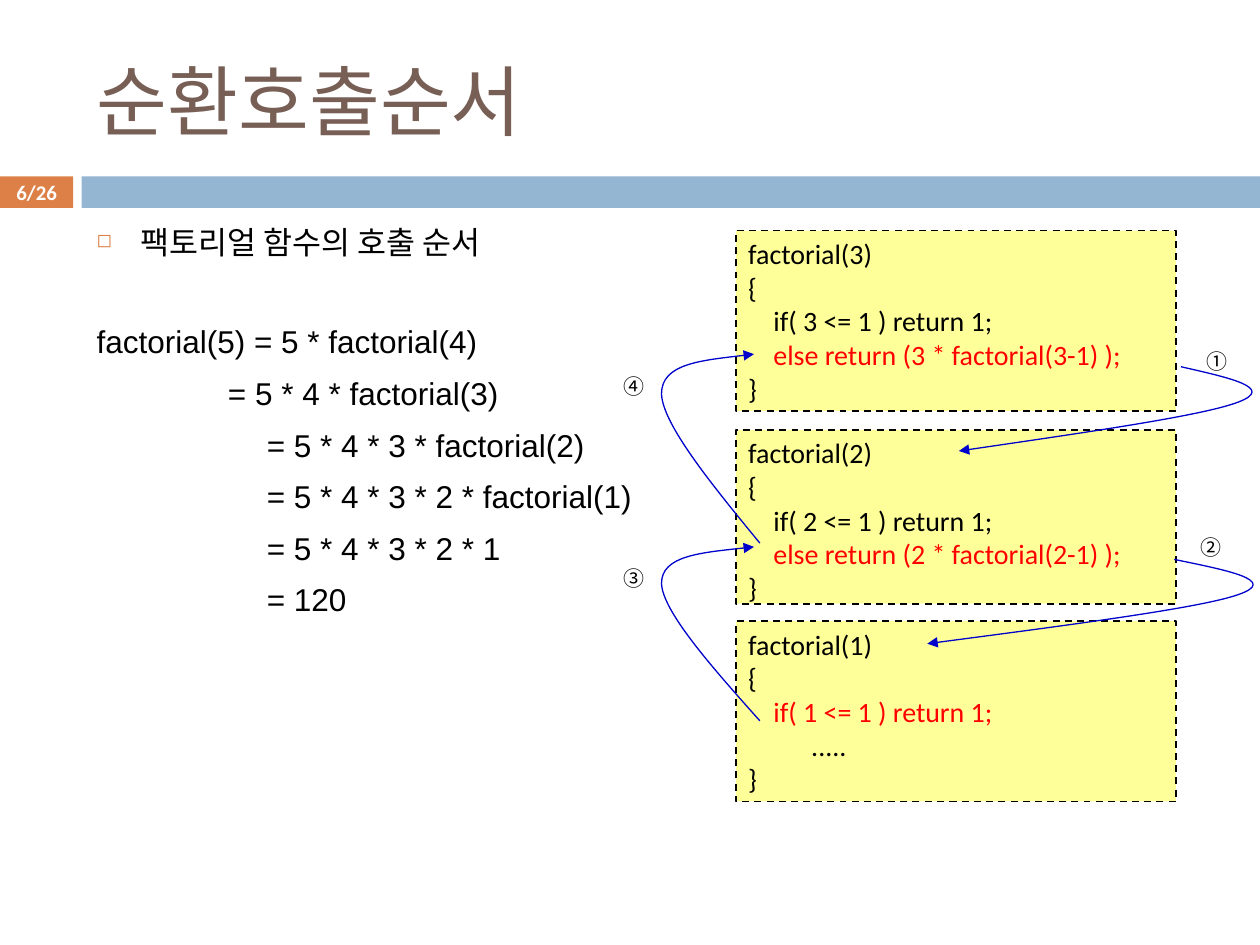
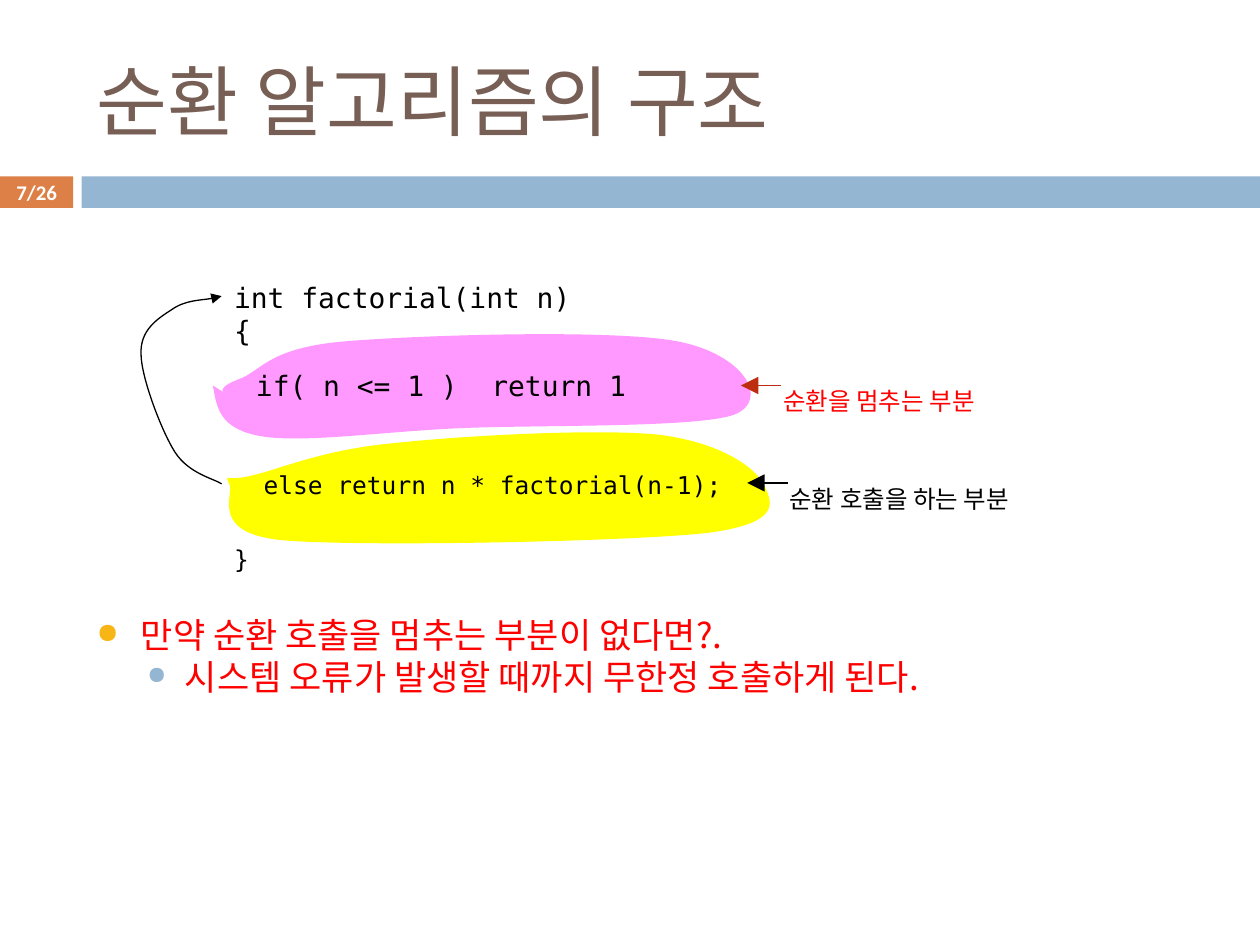
from lxml import etree
from pptx import Presentation
from pptx.dml.color import RGBColor
from pptx.enum.dml import MSO_LINE
from pptx.enum.shapes import MSO_CONNECTOR, MSO_SHAPE
from pptx.enum.text import MSO_ANCHOR, PP_ALIGN
from pptx.oxml.ns import qn
from pptx.util import Pt

BLACK = RGBColor(0x00, 0x00, 0x00)
WHITE = RGBColor(0xFF, 0xFF, 0xFF)
RED = RGBColor(0xFF, 0x00, 0x00)
BRICK = RGBColor(0xBD, 0x2E, 0x11)
BROWN = RGBColor(0x77, 0x5F, 0x55)
ORANGE = RGBColor(0xDD, 0x80, 0x47)
GOLD = RGBColor(0xF7, 0xB6, 0x15)
SKY = RGBColor(0x94, 0xB6, 0xD2)
NAVY = RGBColor(0x00, 0x00, 0xCC)
CREAM = RGBColor(0xFF, 0xFF, 0x99)
YELLOW = RGBColor(0xFF, 0xFF, 0x00)
PINK = RGBColor(0xFF, 0x99, 0xFF)

RECT = MSO_SHAPE.RECTANGLE
STRAIGHT = MSO_CONNECTOR.STRAIGHT
DASH = MSO_LINE.DASH
TOP, MIDDLE = MSO_ANCHOR.TOP, MSO_ANCHOR.MIDDLE
LEFT, CENTER = PP_ALIGN.LEFT, PP_ALIGN.CENTER

SANS, ARIAL, MONO, KOREAN = "Calibri", "Arial", "DejaVu Sans Mono", "Noto Sans CJK KR"
PAGES = 26

CALL_LOOP = [(0.7, 0), (0.85, 0.13), (1, 0.25), (0.88, 0.42), (0.77, 0.58), (0.38, 0.79), (0, 1)]
RETURN_LOOP = [(1, 1), (0.51, 0.69), (0.01, 0.37), (0, 0.21), (0, 0.05), (0.46, 0.03), (0.94, 0)]
YELLOW_BLOB = [
    (51, 126.5), (48.2, 120), (49.6, 125.8), (65.4, 121.4), (80.6, 117.8), (105, 107),
    (143.9, 103.4), (182.1, 99.1), (260.6, 94.8), (295.8, 98.4), (331.8, 102.7),
    (351.3, 117.1), (356.3, 126.5), (360.6, 135.8), (369.3, 148.8), (323.9, 154.6),
    (278.6, 159.6), (128.8, 162.5), (83.4, 158.9), (38.1, 155.3), (54.6, 132.2), (51, 126.5)]
PINK_BLOB = [
    (47.4, 73.9), (46.7, 72.5), (46.7, 70.3), (58.2, 66), (69.8, 61), (74.8, 48.7),
    (116.6, 45.1), (158.3, 41.5), (270.6, 37.9), (307.4, 45.1), (344.8, 52.3),
    (360.6, 78.2), (339.8, 86.9), (318.2, 94.8), (225.3, 92.6), (179.9, 94.8),
    (135.3, 97), (91.4, 103.4), (68.3, 99.1), (45.3, 94.8), (43.8, 82.6), (41.7, 70.3)]
RECURSION_LOOP = [
    (46.7, 126.5), (42.4, 123.6), (28, 120.7), (20.1, 108.5), (12.2, 96.2), (0.6, 65.3),
    (0.6, 52.3), (0, 38.6), (10, 32.2), (17.9, 27.1), (25.8, 21.4), (41, 21.4), (46.7, 19.2)]


def write(sp, lines, font, size, color=BLACK, anchor=TOP, align=LEFT, wrap=True, bold=False):
    tf = sp.text_frame
    tf.word_wrap = wrap
    tf.vertical_anchor = anchor
    for i, line in enumerate(lines):
        p = tf.paragraphs[0] if i == 0 else tf.add_paragraph()
        p.alignment = align
        for text, run_color in [(line, color)] if isinstance(line, str) else line:
            r = p.add_run()
            r.text = text
            r.font.name, r.font.size, r.font.bold = font, Pt(size), bold
            r.font.color.rgb = run_color
            ea = etree.SubElement(r.font._element, qn("a:ea"))
            ea.set("typeface", KOREAN)
    return tf


def add_text(slide, box, lines, font, size, **style):
    return write(slide.shapes.add_textbox(*map(Pt, box)), lines, font, size, **style)


def add_rect(slide, box, fill):
    sp = slide.shapes.add_shape(RECT, *map(Pt, box))
    sp.shadow.inherit = False
    sp.fill.solid()
    sp.fill.fore_color.rgb = fill
    sp.line.fill.background()
    return sp


def add_arrowhead(sp, color, size="med"):
    sp.line.color.rgb = color
    sp.line.width = Pt(0.75)
    ln = sp._element.spPr.find(qn("a:ln"))
    tail = etree.SubElement(ln, qn("a:tailEnd"))
    for key, value in (("type", "triangle"), ("w", size), ("len", size)):
        tail.set(key, value)


def add_curve(slide, box, points, fill=None, arrow=None):
    x, y, w, h = box
    start, *rest = [(Pt(x + w * u), Pt(y + h * v)) for u, v in points]
    builder = slide.shapes.build_freeform(*start)
    builder.add_line_segments(rest, close=fill is not None)
    sp = builder.convert_to_shape()
    sp.shadow.inherit = False
    path = sp._element.spPr.find(".//" + qn("a:path"))
    segments = path.findall(qn("a:lnTo"))
    for i in range(0, len(segments), 3):
        bezier = etree.Element(qn("a:cubicBezTo"))
        segments[i].addprevious(bezier)
        for segment in segments[i:i + 3]:
            bezier.append(segment[0])
            path.remove(segment)
    if fill is None:
        sp.fill.background()
        add_arrowhead(sp, arrow)
    else:
        sp.fill.solid()
        sp.fill.fore_color.rgb = fill
        sp.line.fill.background()


def add_pointer(slide, x, y, color):
    line = slide.shapes.add_connector(STRAIGHT, Pt(x + 23), Pt(y), Pt(x), Pt(y))
    add_arrowhead(line, color, "lg")
    etree.SubElement(line._element.spPr, qn("a:effectLst"))


def set_indent(p, left, hanging=0):
    pPr = p._p.get_or_add_pPr()
    pPr.set("marL", str(Pt(left)))
    pPr.set("indent", str(-Pt(hanging)))
    return pPr


def set_bullet(p, left, hanging, char, color, percent):
    pPr = set_indent(p, left, hanging)
    clr = etree.SubElement(pPr, qn("a:buClr"))
    etree.SubElement(clr, qn("a:srgbClr")).set("val", str(color))
    etree.SubElement(pPr, qn("a:buSzPct")).set("val", str(percent * 1000))
    etree.SubElement(pPr, qn("a:buChar")).set("char", char)


def add_frame(prs, title, page):
    slide = prs.slides.add_slide(prs.slide_layouts[6])
    number = add_rect(slide, (0, 100.8, 41.9, 18), ORANGE)
    tf = write(number, [f"{page}/{PAGES}"], SANS, 11.9, WHITE, MIDDLE, CENTER, bold=True)
    tf.margin_left = tf.margin_right = 0
    add_rect(slide, (46.6, 100.8, 673.4, 18), SKY)
    add_text(slide, (48.2, 18, 642.2, 77.8), [title], SANS, 44, color=BROWN, anchor=MIDDLE)
    return slide


def add_expansion(slide, box):
    steps = [
        ("팩토리얼 함수의 호출 순서", 0, 0),
        ("factorial(5) = 5 * factorial(4)", 0, 35),
        ("= 5 * 4 * factorial(3)", 75, 7.9),
        ("= 5 * 4 * 3 * factorial(2)", 97.2, 7.9),
        ("= 5 * 4 * 3 * 2 * factorial(1)", 97.2, 7.9),
        ("= 5 * 4 * 3 * 2 * 1", 97.2, 7.9),
        ("= 120", 97.2, 7.9)]
    tf = add_text(slide, box, [text for text, _, _ in steps], ARIAL, 18)
    for p, (_, left, before) in zip(tf.paragraphs, steps):
        set_indent(p, left)
        p.space_before = Pt(before)
    set_bullet(tf.paragraphs[0], 25.2, 25.2, "◻", ORANGE, 60)


def add_call_box(slide, box, n):
    if n > 1:
        body = [f"    if( {n} <= 1 ) return 1;",
                [("    ", BLACK), (f"else return ({n} * factorial({n}-1) );", RED)]]
    else:
        body = [[("    ", BLACK), ("if( 1 <= 1 ) return 1;", RED)], "\t....."]
    sp = add_rect(slide, box, CREAM)
    sp.line.color.rgb = BLACK
    sp.line.width = Pt(1)
    sp.line.dash_style = DASH
    write(sp, [f"factorial({n})", "{", *body, "}"], SANS, 16)


def add_call_stack(slide, x, y):
    for n, top, height in ((3, 0, 103), (2, 113.8, 99.4), (1, 223.2, 103)):
        add_call_box(slide, (x, y + top, 251.5, height), n)
    for mark, left, top in (("①", 262, 64), ("②", 258.5, 170), ("③", -71.3, 188), ("④", -71.3, 77.8)):
        add_text(slide, (x + left, y + top, 26.6, 21.6), [mark], KOREAN, 12,
                 anchor=MIDDLE, wrap=False)
    for points, left, top, width, height in (
            (CALL_LOOP, 127.4, 77.8, 181.4, 48.2),
            (RETURN_LOOP, -42.5, 180.7, 56.2, 99.4),
            (CALL_LOOP, 109.4, 187.9, 201.6, 48.2),
            (RETURN_LOOP, -42.5, 70.6, 56.2, 108)):
        add_curve(slide, (x + left, y + top, width, height), points, arrow=NAVY)


def add_code_diagram(slide, x, y):
    area = (x, y, 1, 1)
    add_curve(slide, area, YELLOW_BLOB, fill=YELLOW)
    add_curve(slide, area, PINK_BLOB, fill=PINK)
    for lines, size, left, top, width, height in (
            (["int factorial(int n)", "{"], 16, 46.7, 1.2, 231.8, 56.2),
            (["  if( n <= 1 )  return 1"], 16, 40, 46.6, 323.3, 46.8),
            (["  else return n * factorial(n-1);"], 14, 46.7, 103.4, 323.3, 47.5),
            (["}"], 14, 46.7, 154.6, 30, 29.5)):
        add_text(slide, (x + left, y + top, width, height), lines, MONO, size, anchor=MIDDLE)
    for text, color, arrow, left, top in (
            ("순환을 멈추는 부분", RED, BRICK, 343.4, 70.3),
            ("순환 호출을 하는 부분", BLACK, BLACK, 347, 126)):
        add_pointer(slide, x + left, y + top, arrow)
        add_text(slide, (x + left + 17, y + top - 3, 170, 25), [text], KOREAN, 14,
                 color=color)
    add_curve(slide, area, RECURSION_LOOP, arrow=BLACK)


def add_question(slide, box):
    tf = add_text(slide, box, ["만약 순환 호출을 멈추는 부분이 없다면?.",
                               "시스템 오류가 발생할 때까지 무한정 호출하게 된다."],
                  KOREAN, 20, color=RED)
    question, answer = tf.paragraphs
    set_bullet(question, 25.2, 25.2, "●", GOLD, 80)
    answer.level = 1
    set_bullet(answer, 50.4, 21.6, "●", SKY, 70)


def main():
    prs = Presentation()
    prs.slide_width, prs.slide_height = Pt(720), Pt(540)

    slide = add_frame(prs, "순환호출순서", 6)
    add_expansion(slide, (48.2, 124, 350, 240))
    add_call_stack(slide, 420.5, 131.8)

    slide = add_frame(prs, "순환 알고리즘의 구조", 7)
    add_code_diagram(slide, 80, 150)
    add_question(slide, (48.2, 347, 642.2, 70))

    prs.save("out.pptx")


if __name__ == "__main__":
    main()
